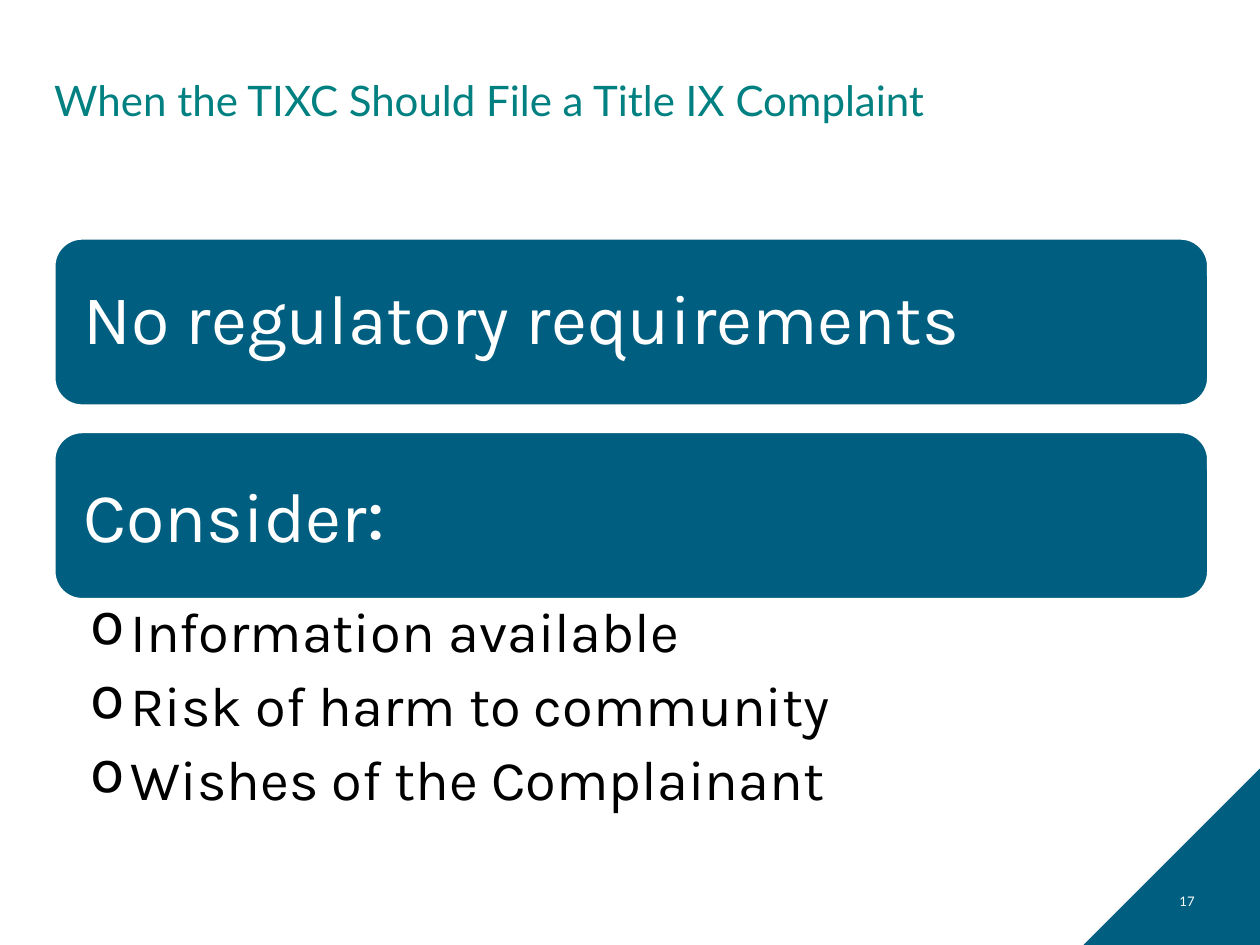
from dataclasses import dataclass

from pptx import Presentation
from pptx.dml.color import RGBColor
from pptx.enum.shapes import MSO_SHAPE
from pptx.enum.text import MSO_ANCHOR, PP_ALIGN
from pptx.oxml.ns import qn
from pptx.util import Pt

ROUNDED, TRIANGLE = MSO_SHAPE.ROUNDED_RECTANGLE, MSO_SHAPE.RIGHT_TRIANGLE
TOP, MIDDLE = MSO_ANCHOR.TOP, MSO_ANCHOR.MIDDLE
LEFT, RIGHT = PP_ALIGN.LEFT, PP_ALIGN.RIGHT


@dataclass(frozen=True)
class Theme:
    blue: RGBColor = RGBColor(0x00, 0x5E, 0x80)
    teal: RGBColor = RGBColor(0x00, 0x80, 0x80)
    white: RGBColor = RGBColor(0xFF, 0xFF, 0xFF)
    black: RGBColor = RGBColor(0x00, 0x00, 0x00)
    heading: str = "Lato"
    body: str = "Karla"
    title_size: float = 24
    banner_size: float = 40
    colon_size: float = 48
    bullet_size: float = 32
    number_size: float = 7.5


THEME = Theme()
X, WIDTH = 31, 659.5
BANNER_TOP, BANNER_HEIGHT, BANNER_PITCH = 136.2, 95.6, 110.6


def setup_frame(s, insets, anchor):
    tf = s.text_frame
    tf.word_wrap = True
    tf.vertical_anchor = anchor
    tf.margin_left, tf.margin_top, tf.margin_right, tf.margin_bottom = map(Pt, insets)
    return tf


def style(p, font, size, color, align=LEFT, spacing=0.9):
    p.alignment = align
    p.line_spacing = spacing
    for r in p.runs:
        r.font.name = font
        r.font.size = Pt(size)
        r.font.color.rgb = color


def add_text(sp, box, text, insets, anchor):
    s = sp.add_textbox(*map(Pt, box))
    tf = setup_frame(s, insets, anchor)
    tf.text = text
    return tf


def add_filled(sp, kind, box):
    s = sp.add_shape(kind, *map(Pt, box))
    s.shadow.inherit = False
    s.fill.solid()
    s.fill.fore_color.rgb = THEME.blue
    s.line.fill.background()
    return s


def add_banner(sp, row, text):
    top = BANNER_TOP + row * BANNER_PITCH
    s = add_filled(sp, ROUNDED, (X, top, WIDTH, BANNER_HEIGHT))
    s.line.color.rgb = THEME.white
    s.line.width = Pt(1.5)
    tf = setup_frame(s, (12, 12, 12, 12), MIDDLE)
    tf.text = text
    p = tf.paragraphs[0]
    style(p, THEME.body, THEME.banner_size, THEME.white)
    return p


def add_bullets(sp, top, items):
    tf = add_text(sp, (X, top, WIDTH, 129.6), "\n".join(items), (21, 3, 18, 3), TOP)
    for p in tf.paragraphs:
        pPr = p._p.get_or_add_pPr()
        pPr.set("marL", str(Pt(22.5)))
        pPr.set("indent", str(Pt(-22.5)))
        bullet = pPr.makeelement(qn("a:buChar"), {"char": "o"})
        pPr.append(bullet)
        style(p, THEME.body, THEME.bullet_size, THEME.black)
        p.space_after = Pt(7.5)


def add_corner(sp, size):
    s = add_filled(sp, TRIANGLE, (720 - size, 540 - size, size, size))
    s.element.spPr.find(qn("a:xfrm")).set("flipH", "1")


def main():
    prs = Presentation()
    prs.slide_width, prs.slide_height = Pt(720), Pt(540)
    sp = prs.slides.add_slide(prs.slide_layouts[6]).shapes

    # Corner decoration
    add_corner(sp, 100.8)

    # Title
    tf = add_text(sp, (X, 28.8, WIDTH, 59.8),
                  "When the TIXC Should File a Title IX Complaint",
                  (0, 3.6, 7.2, 3.6), MIDDLE)
    style(tf.paragraphs[0], THEME.heading, THEME.title_size, THEME.teal)

    # Banners, the second with a larger colon
    add_banner(sp, 0, "No regulatory requirements")
    p = add_banner(sp, 1, "Consider")
    p.add_run().text = ":"
    style(p, THEME.body, THEME.banner_size, THEME.white)
    p.runs[-1].font.size = Pt(THEME.colon_size)

    # Points to consider
    add_bullets(sp, BANNER_TOP + BANNER_PITCH + BANNER_HEIGHT,
                ("Information available", "Risk of harm to community",
                 "Wishes of the Complainant"))

    # Page number
    tf = add_text(sp, (527.8, 500.4, 162, 28.8), "17", (7.2, 3.6, 7.2, 3.6), MIDDLE)
    style(tf.paragraphs[0], THEME.heading, THEME.number_size, THEME.white, RIGHT, 1.0)

    prs.save("out.pptx")


if __name__ == "__main__":
    main()
